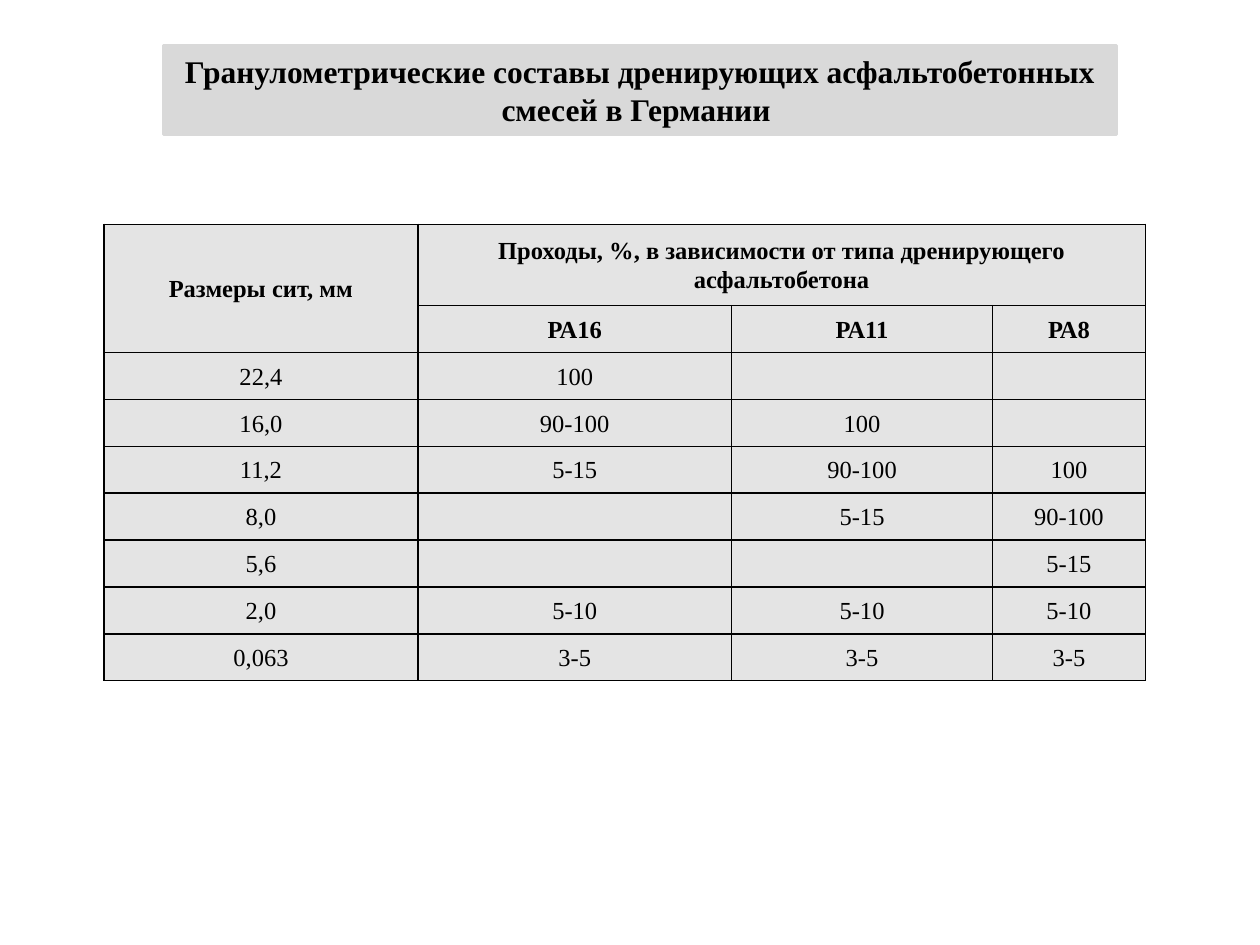
from lxml import etree
from pptx import Presentation
from pptx.dml.color import RGBColor
from pptx.enum.shapes import MSO_SHAPE
from pptx.enum.text import MSO_ANCHOR, PP_ALIGN
from pptx.oxml.ns import qn
from pptx.util import Pt

RECTANGLE = MSO_SHAPE.RECTANGLE
MIDDLE = MSO_ANCHOR.MIDDLE
CENTER = PP_ALIGN.CENTER

FONT = "Times New Roman"
BLACK, GREY = "000000", "D9D9D9"
FILL_ALPHA = 71000
CELL_INDENT = Pt(4.5)

TITLE = "Гранулометрические составы дренирующих асфальтобетонных смесей в Германии "
ROWS = [
    ("Размеры сит, мм", "Проходы, %, в зависимости от типа дренирующего асфальтобетона", "", ""),
    ("", "РА16", "РА11", "РА8"),
    ("22,4", "100", "", ""),
    ("16,0", "90-100", "100", ""),
    ("11,2", "5-15", "90-100", "100"),
    ("8,0", "", "5-15", "90-100"),
    ("5,6", "", "", "5-15"),
    ("2,0", "5-10", "5-10", "5-10"),
    ("0,063", "3-5", "3-5", "3-5"),
]
HEADER_ROWS = 2
COLUMN_WIDTHS = [179.3, 179.3, 149.1, 87.4]
ROW_HEIGHTS = [46.5] + [26.8] * (len(ROWS) - 1)


def color(value):
    return RGBColor.from_string(value)


def style_paragraph(para, size, bold):
    para.alignment = CENTER
    for span in para.runs:
        span.font.name = FONT
        span.font.size = Pt(size)
        span.font.bold = bold
        span.font.color.rgb = color(BLACK)


def add_title(page):
    box = page.shapes.add_shape(RECTANGLE, Pt(93.5), Pt(26), Pt(544.5), Pt(51))
    box.shadow.inherit = False
    box.fill.solid()
    box.fill.fore_color.rgb = color(GREY)
    box.line.color.rgb = color(GREY)
    box.line.width = Pt(1.5)
    box.text_frame.word_wrap = True
    box.text_frame.text = TITLE
    style_paragraph(box.text_frame.paragraphs[0], 18, True)


def paint_cell(cell):
    """Give the cell a translucent fill and thin black borders."""
    cell.fill.solid()
    cell.fill.fore_color.rgb = color(GREY)
    properties = cell._tc.get_or_add_tcPr()
    shade = properties.find(".//" + qn("a:srgbClr"))
    etree.SubElement(shade, qn("a:alpha"), val=str(FILL_ALPHA))
    for position, side in enumerate(("a:lnL", "a:lnR", "a:lnT", "a:lnB")):
        border = etree.Element(qn(side), w=str(Pt(1)))
        solid = etree.SubElement(border, qn("a:solidFill"))
        etree.SubElement(solid, qn("a:srgbClr"), val=BLACK)
        properties.insert(position, border)


def fill_cell(cell, text, bold):
    cell.text_frame.text = text
    cell.vertical_anchor = MIDDLE
    cell.margin_left = cell.margin_right = cell.margin_top = cell.margin_bottom = 0
    para = cell.text_frame.paragraphs[0]
    style_paragraph(para, 14, bold)
    para.line_spacing = Pt(16.4)
    para.space_before = para.space_after = Pt(2.5)
    for side in ("marL", "marR"):
        para._p.get_or_add_pPr().set(side, str(CELL_INDENT))
    paint_cell(cell)


def add_sieve_table(page):
    frame = page.shapes.add_table(
        len(ROWS), len(COLUMN_WIDTHS), Pt(59.5), Pt(128.2),
        Pt(sum(COLUMN_WIDTHS)), Pt(sum(ROW_HEIGHTS)))
    table = frame.table
    for column, width in zip(table.columns, COLUMN_WIDTHS):
        column.width = Pt(width)
    for row, height in zip(table.rows, ROW_HEIGHTS):
        row.height = Pt(height)
    for r, texts in enumerate(ROWS):
        for c, text in enumerate(texts):
            fill_cell(table.cell(r, c), text, r < HEADER_ROWS)
    table.cell(0, 0).merge(table.cell(1, 0))
    table.cell(0, 1).merge(table.cell(0, 3))


def main():
    deck = Presentation()
    deck.slide_width, deck.slide_height = Pt(720), Pt(540)
    page = deck.slides.add_slide(deck.slide_layouts[6])
    add_title(page)
    add_sieve_table(page)
    deck.save("out.pptx")


if __name__ == "__main__":
    main()
